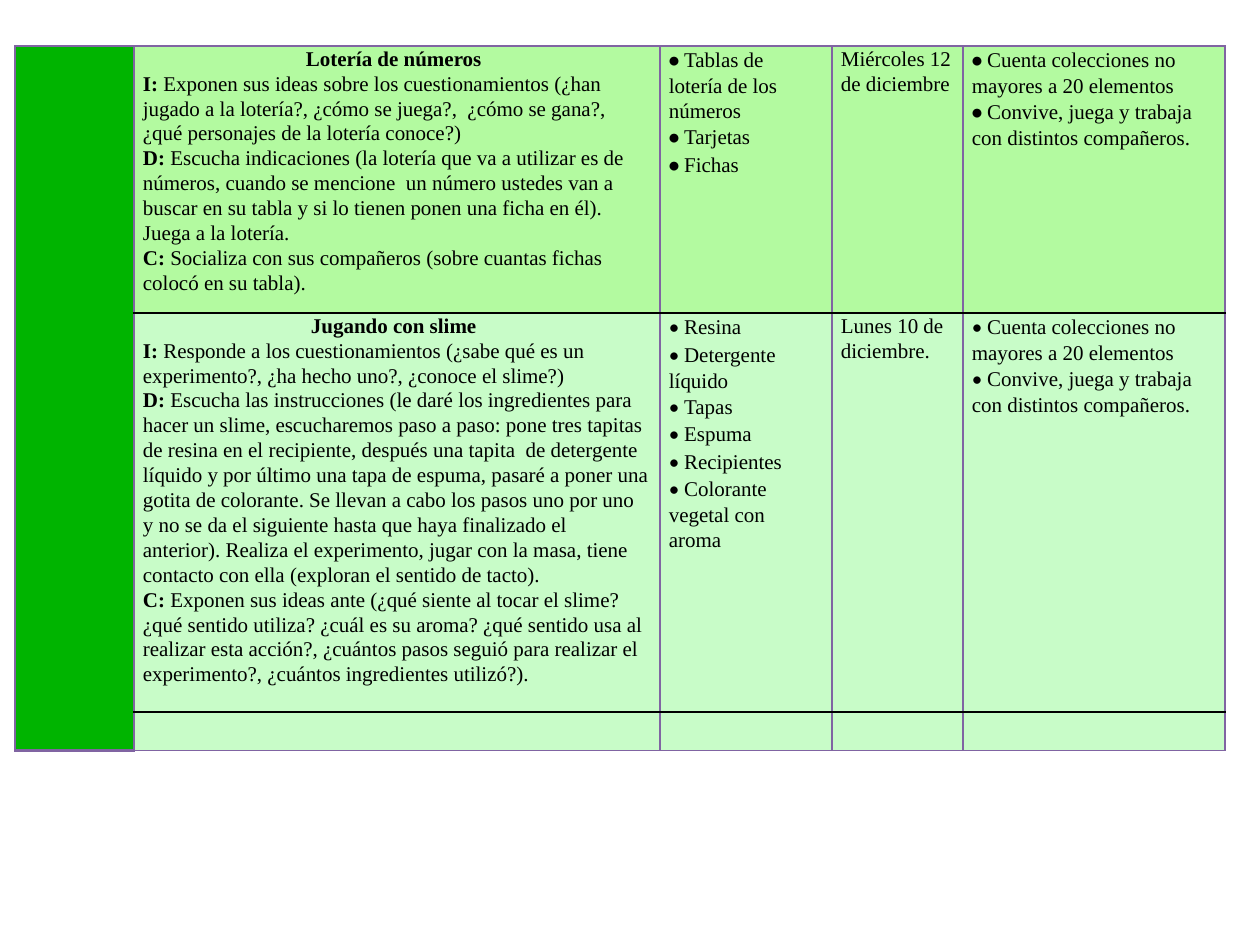
from lxml import etree
from pptx import Presentation
from pptx import util as u
from pptx.dml.color import RGBColor
from pptx.enum import text
from pptx.oxml.ns import qn

SCALE = 914400 / 126
BLACK = RGBColor(0x00, 0x00, 0x00)
PURPLE = RGBColor(0x80, 0x64, 0xA2)
GREEN = RGBColor(0x00, 0xB4, 0x00)
LIME = RGBColor(0xB3, 0xFA, 0xA0)
MINT = RGBColor(0xC8, 0xFC, 0xC8)
SERIF, SANS = "Times New Roman", "Calibri"

COLS = [119, 526, 172, 131, 262]
ROWS = [267, 399, 38]
FILLS = [LIME, MINT, MINT]
GOALS = [
    "Cuenta colecciones no mayores a 20 elementos",
    "Convive, juega y trabaja con distintos compañeros.",
]
PLANS = [
    {
        "title": "Lotería de números ",
        "steps": [
            ("I: ", "Exponen sus ideas sobre los cuestionamientos (¿han jugado a la lotería?, "
                    "¿cómo se juega?,  ¿cómo se gana?, ¿qué personajes de la lotería conoce?)"),
            ("D: ", "Escucha indicaciones (la lotería que va a utilizar es de números, cuando "
                    "se mencione  un número ustedes van a buscar en su tabla y si lo tienen "
                    "ponen una ficha en él). Juega a la lotería."),
            ("C: ", "Socializa con sus compañeros (sobre cuantas fichas colocó en su tabla)."),
        ],
        "items": ["Tablas de lotería de los números", "Tarjetas", "Fichas"],
        "date": "Miércoles 12 de diciembre",
        "heavy": True,
    },
    {
        "title": "Jugando con slime ",
        "steps": [
            ("I: ", "Responde a los cuestionamientos (¿sabe qué es un experimento?, ¿ha hecho "
                    "uno?, ¿conoce el slime?)"),
            ("D: ", "Escucha las instrucciones (le daré los ingredientes para hacer un slime, "
                    "escucharemos paso a paso: pone tres tapitas de resina en el recipiente, "
                    "después una tapita  de detergente líquido y por último una tapa de espuma, "
                    "pasaré a poner una gotita de colorante. Se llevan a cabo los pasos uno por "
                    "uno y no se da el siguiente hasta que haya finalizado el anterior). Realiza "
                    "el experimento, jugar con la masa, tiene contacto con ella (exploran el "
                    "sentido de tacto)."),
            ("C: ", "Exponen sus ideas ante (¿qué siente al tocar el slime? ¿qué sentido utiliza? "
                    "¿cuál es su aroma? ¿qué sentido usa al realizar esta acción?, ¿cuántos pasos "
                    "seguió para realizar el experimento?, ¿cuántos ingredientes utilizó?)."),
        ],
        "items": ["Resina", "Detergente líquido", "Tapas", "Espuma", "Recipientes",
                  "Colorante vegetal con aroma"],
        "date": "Lunes 10 de diciembre.",
        "heavy": False,
    },
]


def px(n):
    """Turn pixels into EMU."""
    return u.Emu(round(n * SCALE))


def write(par, words, font=SERIF, size=12, bold=False, color=BLACK):
    """Add a formatted run to a paragraph."""
    run = par.add_run()
    run.text = words
    run.font.name, run.font.size, run.font.bold = font, u.Pt(size), bold
    run.font.color.rgb = color


def fill_cell(cell, lines):
    """Fill a cell with paragraphs, each a list of (words, format) runs."""
    frame = cell.text_frame
    for i, line in enumerate(lines):
        par = frame.add_paragraph() if i else frame.paragraphs[0]
        par.line_spacing = 1.07
        for words, style in line:
            write(par, words, **style)


def bullets(items, heavy):
    """Give the lines of a bulleted list."""
    return [[("• ", {"font": SANS, "bold": heavy}), (item, {})] for item in items]


def edge(cell, **sides):
    """Draw cell borders from side=(color, points)."""
    props = cell._tc.get_or_add_tcPr()
    for i, side in enumerate("LRTB"):
        color, width = sides.get(side, (PURPLE, 1))
        line = etree.Element(qn("a:ln" + side), w=str(u.Pt(width)))
        solid = etree.SubElement(line, qn("a:solidFill"))
        etree.SubElement(solid, qn("a:srgbClr"), val=str(color))
        props.insert(i, line)


def paint(cell, color):
    """Set the fill and margins of a cell."""
    cell.fill.solid()
    cell.fill.fore_color.rgb = color
    cell.margin_left, cell.margin_right = px(9), px(10)
    cell.margin_top = cell.margin_bottom = 0


def plan_row(table, row, plan):
    """Write one activity into its table row."""
    steps = [[(mark, {"bold": True}), (body, {})] for mark, body in plan["steps"]]
    parts = [
        [[(plan["title"], {"bold": True})]] + steps,
        bullets(plan["items"], plan["heavy"]),
        [[(plan["date"], {})]],
        bullets(GOALS, plan["heavy"]),
    ]
    for col, lines in enumerate(parts, 1):
        fill_cell(table.cell(row, col), lines)
    title = table.cell(row, 1).text_frame.paragraphs[0]
    title.alignment = text.PP_ALIGN.CENTER


def plan_table(slide, left, top):
    """Build the table of activities at the given corner."""
    frame = slide.shapes.add_table(len(ROWS), len(COLS), px(left), px(top),
                                   px(sum(COLS)), px(sum(ROWS)))
    table = frame.table
    table.first_row = table.horz_banding = False
    for col, width in zip(table.columns, COLS):
        col.width = px(width)
    for row, height in zip(table.rows, ROWS):
        row.height = px(height)
    rule, last = (BLACK, 1.5), len(ROWS) - 1
    for r, color in enumerate(FILLS):
        side = table.cell(r, 0)
        paint(side, GREEN)
        edge(side, B=(PURPLE, 2))
        for c in range(1, len(COLS)):
            cell = table.cell(r, c)
            paint(cell, color)
            edge(cell, T=rule if r else (PURPLE, 1), B=rule if r < last else (PURPLE, 1))
    table.cell(0, 0).merge(table.cell(last, 0))
    for r, plan in enumerate(PLANS):
        plan_row(table, r, plan)


def main():
    """Build and save the slide."""
    deck = Presentation()
    deck.slide_width, deck.slide_height = px(1260), px(945)
    slide = deck.slides.add_slide(deck.slide_layouts[6])
    plan_table(slide, 15, 46)
    deck.save("out.pptx")


if __name__ == "__main__":
    main()
